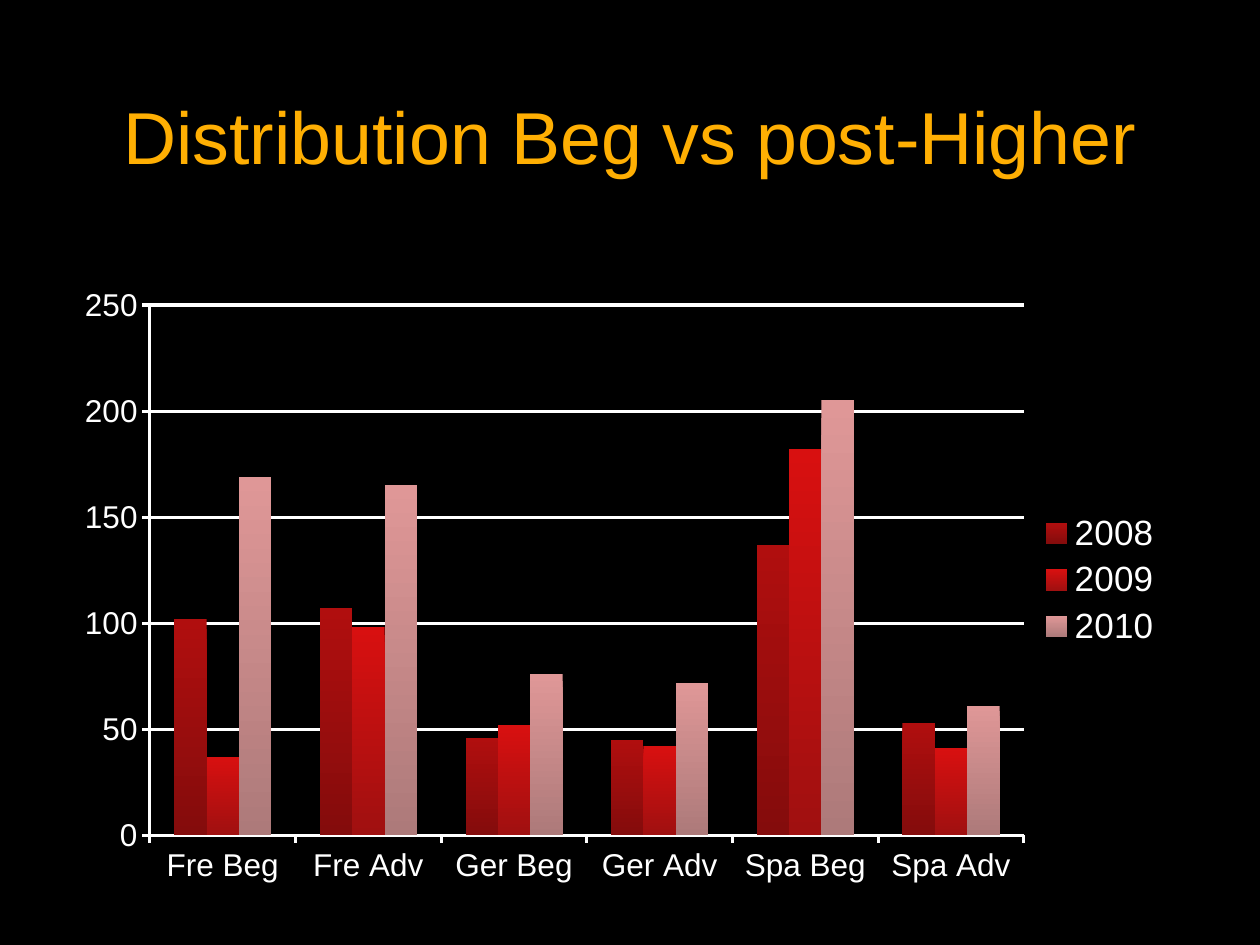
from lxml import etree
from pptx import Presentation
from pptx import util as u
from pptx.chart.data import CategoryChartData
from pptx.dml.color import RGBColor
from pptx.enum import chart as ch, text
from pptx.oxml.ns import qn

BLACK = RGBColor(0x00, 0x00, 0x00)
WHITE = RGBColor(0xFF, 0xFF, 0xFF)
AMBER = RGBColor(0xFF, 0xAF, 0x03)
FONT = "Arial"

# year: values, top colour, bottom colour
YEARS = {
    "2008": ((102, 107, 46, 45, 137, 53),
             RGBColor(0xB0, 0x0E, 0x0E), RGBColor(0x84, 0x0C, 0x0C)),
    "2009": ((37, 98, 52, 42, 182, 41),
             RGBColor(0xD8, 0x10, 0x10), RGBColor(0xA0, 0x10, 0x10)),
    "2010": ((169, 165, 76, 72, 205, 61),
             RGBColor(0xDF, 0x97, 0x97), RGBColor(0xAD, 0x7A, 0x7A)),
}
COURSES = [f"{language} {level}" for language in ("Fre", "Ger", "Spa")
           for level in ("Beg", "Adv")]


def write(frame, words, size, color, align=text.PP_ALIGN.CENTER):
    frame.word_wrap = True
    frame.vertical_anchor = text.MSO_ANCHOR.MIDDLE
    paragraph = frame.paragraphs[0]
    paragraph.alignment = align
    run = paragraph.add_run()
    run.text = words
    run.font.name, run.font.size = FONT, u.Pt(size)
    run.font.color.rgb = color


prs = Presentation()
prs.slide_width, prs.slide_height = u.Inches(10), u.Inches(7.5)
slide = prs.slides.add_slide(prs.slide_layouts[5])
slide.background.fill.solid()
slide.background.fill.fore_color.rgb = BLACK

margin = u.Inches(0.67)
content_width = prs.slide_width - 2 * margin

heading = slide.shapes.title
heading.left, heading.top = margin, u.Inches(0.64)
heading.width, heading.height = content_width, u.Inches(0.86)
write(heading.text_frame, "Distribution Beg vs post-Higher", 42, AMBER)

# Chart
data = CategoryChartData()
data.categories = COURSES
for year, (values, top, bottom) in YEARS.items():
    data.add_series(year, values)
enrolment = slide.shapes.add_chart(
    ch.XL_CHART_TYPE.COLUMN_CLUSTERED, margin, u.Inches(2.2),
    content_width, u.Inches(4.81), data).chart
enrolment.has_title = False
enrolment.font.name, enrolment.font.size = FONT, u.Pt(18)
enrolment.font.color.rgb = WHITE

columns = enrolment.plots[0]
columns.gap_width, columns.overlap = 150, 0
columns.vary_by_categories = False
for series, (values, top, bottom) in zip(columns.series, YEARS.values()):
    fill = series.format.fill
    fill.gradient()
    fill.gradient_angle = 270
    for stop, color in zip(fill.gradient_stops, (top, bottom)):
        stop.color.rgb = color
    series.format.line.fill.background()
    series.invert_if_negative = False

# Axes and gridlines
counts, courses = enrolment.value_axis, enrolment.category_axis
counts.minimum_scale, counts.maximum_scale, counts.major_unit = 0, 250, 50
counts.has_major_gridlines = True
for axis in (counts, courses):
    axis.major_tick_mark = ch.XL_TICK_MARK.OUTSIDE
    axis.minor_tick_mark = ch.XL_TICK_MARK.NONE
for rule in (counts, courses, counts.major_gridlines):
    rule.format.line.color.rgb = WHITE
    rule.format.line.width = u.Pt(1.75)

# Legend
enrolment.has_legend = True
enrolment.legend.position = ch.XL_LEGEND_POSITION.RIGHT
enrolment.legend.include_in_layout = False
enrolment.legend.font.name, enrolment.legend.font.size = FONT, u.Pt(20)
enrolment.legend.font.color.rgb = WHITE

# Inner plot area as shares of the chart
plot_area = courses._element.getparent()
layout = plot_area.find(qn("c:layout"))
if layout is None:
    layout = etree.Element(qn("c:layout"))
    plot_area.insert(0, layout)
manual = etree.SubElement(layout, qn("c:manualLayout"))
for tag, value in (("layoutTarget", "inner"), ("xMode", "edge"), ("yMode", "edge"),
                   ("x", "0.06"), ("y", "0.046"), ("w", "0.801"), ("h", "0.876")):
    etree.SubElement(manual, qn(f"c:{tag}")).set("val", value)

prs.save("out.pptx")
